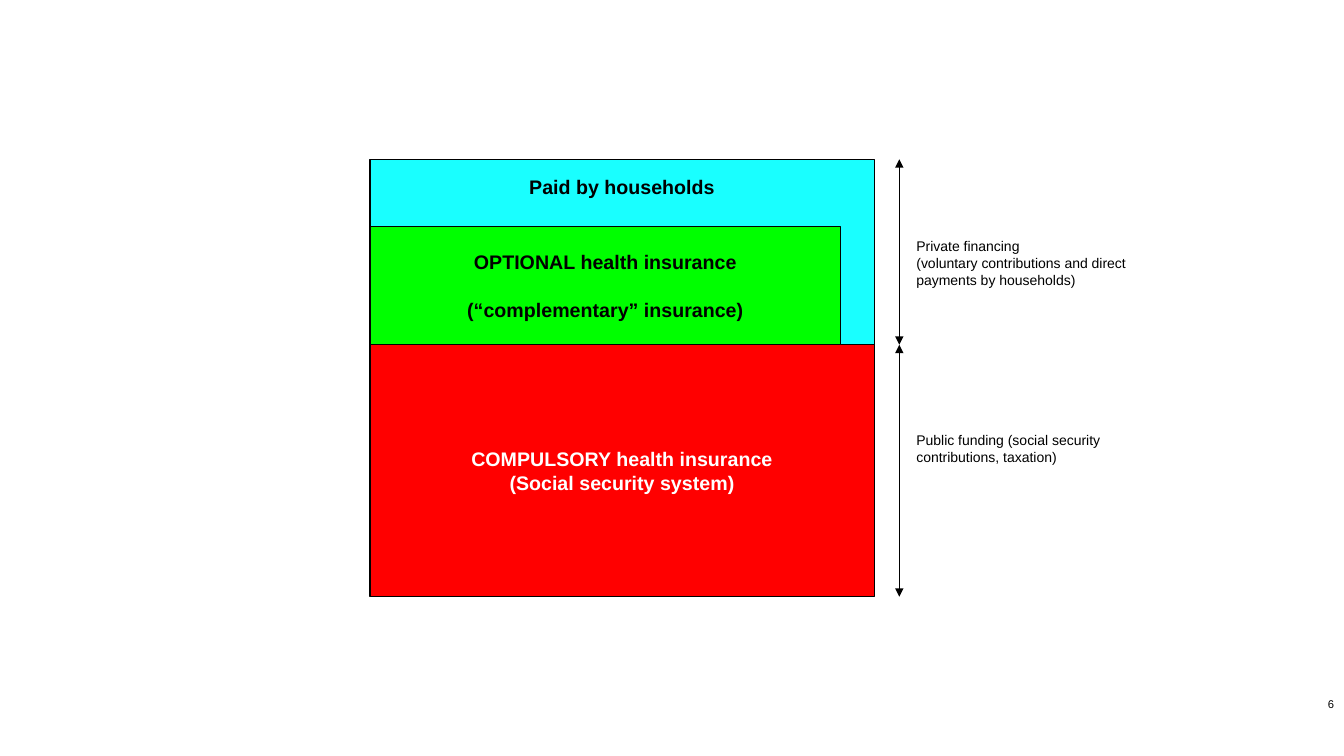
from lxml import etree
from pptx import Presentation
from pptx.dml.color import RGBColor
from pptx.enum import shapes, text
from pptx.oxml.ns import qn
from pptx.util import Inches, Pt

BLACK, WHITE = "000000", "FFFFFF"
LEFT, TOP, SPLIT, BOTTOM = 3.67, 1.58, 3.42, 5.92
ARROW_X, NOTE_X = 8.92, 8.99


def color(value):
    return RGBColor.from_string(value)


def write(shape, lines, size, ink, align, anchor, bold=False, gap=0):
    frame = shape.text_frame
    frame.word_wrap = False
    frame.vertical_anchor = anchor
    for index, line in enumerate(lines):
        para = frame.paragraphs[0] if index == 0 else frame.add_paragraph()
        para.text = line
        para.alignment = align
        para.space_before = Pt(gap if index else 0)
        para.font.name = "Arial"
        para.font.size = Pt(size)
        para.font.bold = bold
        para.font.color.rgb = color(ink)


deck = Presentation()
deck.slide_width, deck.slide_height = Inches(13.33), Inches(7.5)
page = deck.slides.add_slide(deck.slide_layouts[6])

# Page number
number = page.shapes.add_textbox(Inches(1.75), Inches(6.81), Inches(11.58), Inches(0.35))
write(number, ["6"], 8, BLACK, text.PP_ALIGN.RIGHT, text.MSO_ANCHOR.MIDDLE)

# Funding layers: top, width, height, fill, ink, anchor, paragraph gap, lines
middle = text.MSO_ANCHOR.MIDDLE
layers = [
    (TOP, 5, 2.17, "00FFFF", BLACK, text.MSO_ANCHOR.TOP, 0, ["Paid by households"]),
    (SPLIT, 5, 2.5, "FF0000", WHITE, middle, 0,
     ["COMPULSORY health insurance", "(Social security system)"]),
    (2.25, 4.67, 1.17, "00FF00", BLACK, middle, 17,
     ["OPTIONAL health insurance", "(“complementary” insurance)"]),
]
blocks = []
for top, width, height, fill, ink, anchor, gap, lines in layers:
    block = page.shapes.add_shape(shapes.MSO_SHAPE.RECTANGLE, Inches(LEFT), Inches(top),
                                  Inches(width), Inches(height))
    block.shadow.inherit = False
    block.fill.solid()
    block.fill.fore_color.rgb = color(fill)
    block.line.color.rgb = color(BLACK)
    block.line.width = Pt(0.75)
    write(block, lines, 14, ink, text.PP_ALIGN.CENTER, anchor, True, gap)
    blocks.append(block)

# The household layer is slightly transparent, with its label near the top
households = blocks[0]
households.text_frame.margin_top = Inches(0.16)
tint = households.fill._xPr.find(qn("a:solidFill"))[0]
etree.SubElement(tint, qn("a:alpha"), val="90000")

# Double-headed arrows with their notes
spans = [
    (TOP, SPLIT, 2.31, 2.31, 0.6,
     ["Private financing", "(voluntary contributions and direct", "payments by households)"]),
    (SPLIT, BOTTOM, 4.23, 2.06, 0.43,
     ["Public funding (social security", "contributions, taxation)"]),
]
for start, end, note_top, width, height, lines in spans:
    arrow = page.shapes.add_connector(shapes.MSO_CONNECTOR.STRAIGHT, Inches(ARROW_X),
                                      Inches(start), Inches(ARROW_X), Inches(end))
    arrow.line.color.rgb = color(BLACK)
    arrow.line.width = Pt(0.75)
    outline = arrow.line._get_or_add_ln()
    for tip in ("a:headEnd", "a:tailEnd"):
        etree.SubElement(outline, qn(tip), type="triangle")
    etree.SubElement(arrow._element.spPr, qn("a:effectLst"))

    note = page.shapes.add_textbox(Inches(NOTE_X), Inches(note_top), Inches(width), Inches(height))
    write(note, lines, 10, BLACK, text.PP_ALIGN.LEFT, text.MSO_ANCHOR.TOP)

deck.save("out.pptx")
